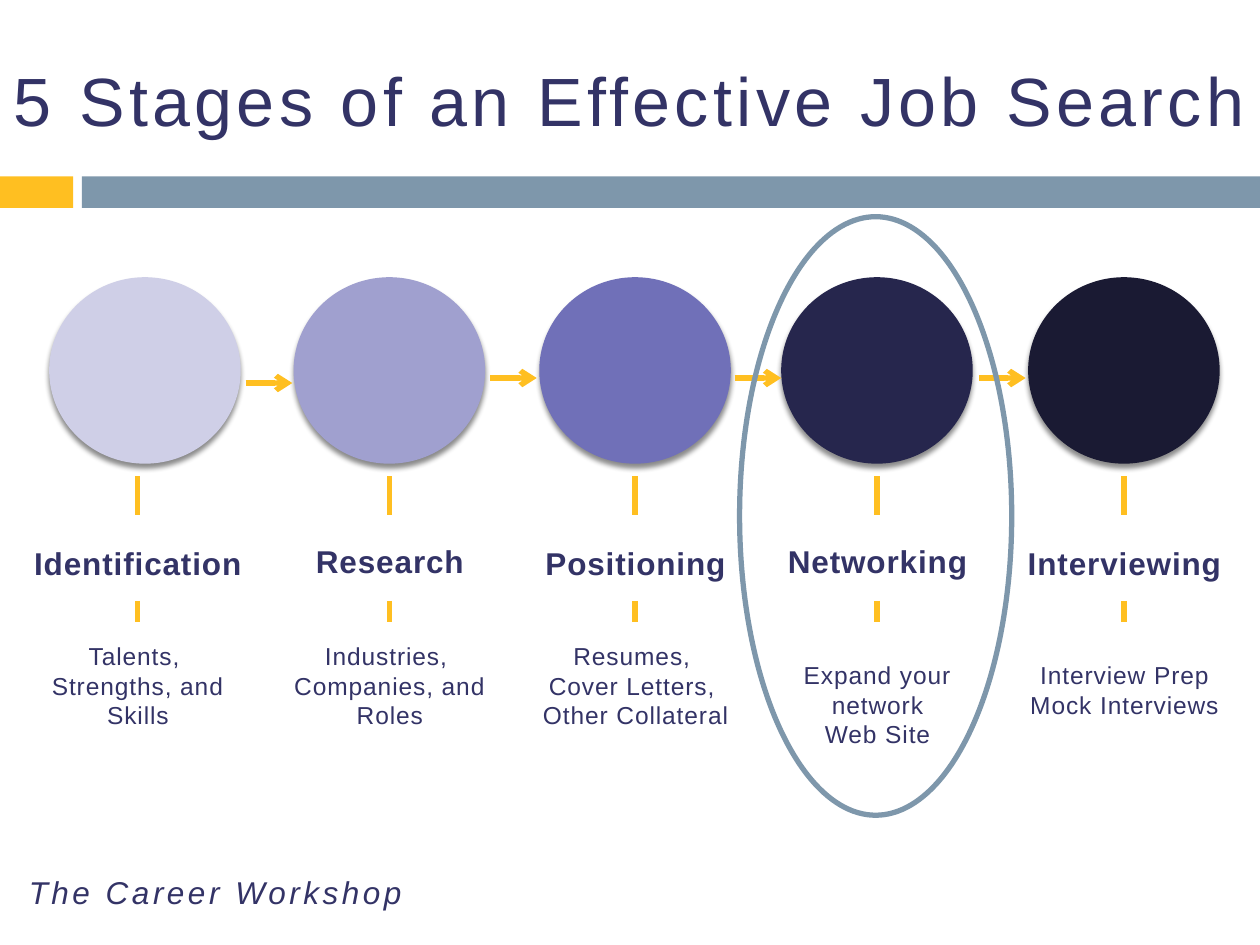
from dataclasses import dataclass
from lxml.etree import SubElement as Sub
from pptx import Presentation
from pptx.dml.color import RGBColor as Rgb
from pptx.enum.shapes import MSO_CONNECTOR as Conn, MSO_SHAPE as Kind
from pptx.enum.text import MSO_ANCHOR as Anchor, PP_ALIGN as Align
from pptx.oxml.ns import qn
from pptx.util import Inches, Pt


@dataclass(frozen=True)
class Theme:
    font: str = "Arial"
    ink: str = "333366"
    gold: str = "FFBF21"
    steel: str = "7E97AB"
    black: str = "000000"
    title: float = 39
    head: float = 18
    body: float = 14
    line: float = 3


class Deck:
    def __init__(self, theme, slide):
        self.theme = theme
        self.slide = slide

    def text(self, box, lines, size, gap, align=Align.CENTER, **style):
        frame = self.slide.shapes.add_textbox(*map(Inches, box)).text_frame
        form = {"word_wrap": True, "vertical_anchor": Anchor.TOP}
        form.update(style.pop("frame", {}))
        for key, val in form.items():
            setattr(frame, key, val)
        look = {"name": self.theme.font, "size": Pt(size), **style}
        for i, line in enumerate(lines):
            para = frame.paragraphs[0] if i == 0 else frame.add_paragraph()
            para.alignment = align
            run = para.add_run()
            run.text = line
            for key, val in look.items():
                setattr(run.font, key, val)
            run.font.color.rgb = Rgb.from_string(self.theme.ink)
            run._r.get_or_add_rPr().set("spc", str(int(gap * 100)))

    def shape(self, kind, box, fill=None, edge=None, shade=False):
        item = self.slide.shapes.add_shape(kind, *map(Inches, box))
        item.shadow.inherit = False
        for part, tint in ((item.fill, fill), (item.line.fill, edge)):
            if tint:
                part.solid()
                part.fore_color.rgb = Rgb.from_string(tint)
            else:
                part.background()
        if edge:
            item.line.width = Pt(self.theme.line)
        if shade:
            fx = item._element.spPr.find(qn("a:effectLst"))
            cast = Sub(fx, qn("a:outerShdw"), blurRad=str(Pt(3)),
                       dist=str(Pt(2.4)), dir="5400000", rotWithShape="0")
            tint = Sub(cast, qn("a:srgbClr"), val=self.theme.black)
            Sub(tint, qn("a:alpha"), val="45000")

    def line(self, x1, y1, x2, y2, arrow=False):
        item = self.slide.shapes.add_connector(
            Conn.STRAIGHT, *map(Inches, (x1, y1, x2, y2)))
        item.line.color.rgb = Rgb.from_string(self.theme.gold)
        item.line.width = Pt(self.theme.line)
        if arrow:
            Sub(item.line._get_or_add_ln(), qn("a:tailEnd"), type="arrow")
        Sub(item._element.spPr, qn("a:effectLst"))


STAGES = [
    ("Identification", "CFCFE7", 0.39, 1.09, 4.27, 5.04,
     ["Talents, ", "Strengths, and Skills"]),
    ("Research", "A0A0CF", 2.33, 3.09, 4.25, 5.04,
     ["Industries, ", "Companies, and Roles"]),
    ("Positioning", "7070B8", 4.28, 5.04, 4.27, 5.04,
     ["Resumes, ", "Cover Letters, ", "Other Collateral"]),
    ("Networking", "26264D", 6.2, 6.96, 4.25, 5.19,
     ["Expand your network", "Web Site"]),
    ("Interviewing", "1A1A33", 8.16, 8.92, 4.27, 5.19,
     ["Interview Prep", "Mock Interviews"]),
]


def main():
    show = Presentation()
    show.slide_width, show.slide_height = Inches(10), Inches(7.5)
    theme = Theme()
    deck = Deck(theme, show.slides.add_slide(show.slide_layouts[6]))

    deck.shape(Kind.RECTANGLE, (0, 1.4, 0.58, 0.25), theme.gold)
    deck.shape(Kind.RECTANGLE, (0.65, 1.4, 9.35, 0.25), theme.steel)
    deck.text((0, 0.25, 10, 1.08), ["5 Stages of an Effective Job Search"],
              theme.title, 2.5,
              frame={"vertical_anchor": Anchor.MIDDLE,
                     "margin_left": 0, "margin_right": 0})
    deck.text((0.13, 6.88, 3.52, 0.4), ["The Career Workshop"],
              theme.head, 2, Align.LEFT, italic=True)

    for name, fill, left, stem, top, low, lines in STAGES:
        deck.shape(Kind.OVAL, (left, 2.2, 1.52, 1.48), fill, shade=True)
        deck.line(stem, 3.78, stem, 4.09)
        deck.text((stem - 0.93, top, 1.87, 0.4), [name],
                  theme.head, 0.5, bold=True)
        deck.line(stem, 4.77, stem, 4.94)
        deck.text((stem - 0.93, low, 1.87, 0.81), lines, theme.body, 0.5)

    for i, y in enumerate((3.04, 3, 3, 3)):
        x = 1.95 + 1.94 * i
        deck.line(x, y, x + 0.37, y, arrow=True)
    deck.shape(Kind.OVAL, (5.87, 1.72, 2.16, 4.75), edge=theme.steel)
    show.save("out.pptx")


if __name__ == "__main__":
    main()
